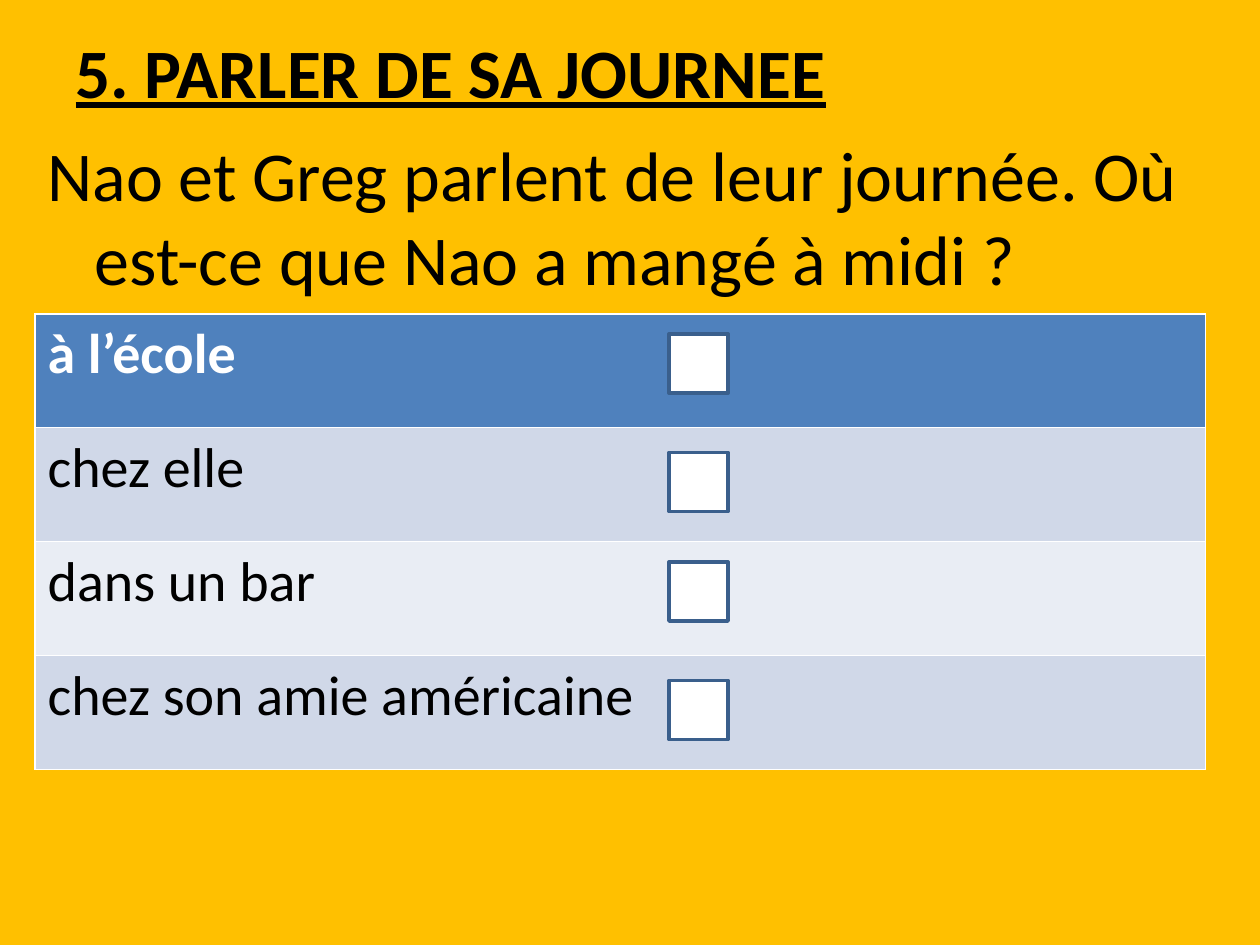
from dataclasses import dataclass

from lxml.etree import SubElement
from pptx import Presentation
from pptx.dml.color import RGBColor as Rgb
from pptx.enum.shapes import MSO_SHAPE as Shape
from pptx.enum.text import MSO_ANCHOR as Anchor, MSO_AUTO_SIZE as AutoSize, PP_ALIGN as Align
from pptx.oxml.ns import qn
from pptx.util import Pt


@dataclass(frozen=True)
class Theme:
    font: str = "Calibri"
    background: Rgb = Rgb(0xFF, 0xC0, 0x00)
    ink: Rgb = Rgb(0x00, 0x00, 0x00)
    white: Rgb = Rgb(0xFF, 0xFF, 0xFF)
    header: Rgb = Rgb(0x4F, 0x81, 0xBD)
    dark_band: Rgb = Rgb(0xD0, 0xD8, 0xE8)
    light_band: Rgb = Rgb(0xE9, 0xED, 0xF4)
    box_line: Rgb = Rgb(0x3A, 0x5F, 0x8C)
    title_size: float = 39.6
    question_size: float = 40
    answer_size: float = 32


@dataclass(frozen=True)
class Answer:
    text: str
    box_top: float


THEME = Theme()
ANSWERS = [
    Answer("à l’école", 190.8),
    Answer("chez elle", 258.5),
    Answer("dans un bar", 321.1),
    Answer("chez son amie américaine", 388.8),
]
ROW_HEIGHT = 65.16
BOX_LEFT, BOX_SIDE = 382.3, 33.8


def place(shape, left: float, top: float, width: float, height: float) -> None:
    shape.left, shape.top = Pt(left), Pt(top)
    shape.width, shape.height = Pt(width), Pt(height)


def add_run(paragraph, text: str, size: float, color: Rgb = THEME.ink,
            bold: bool = False, underline: bool = False) -> None:
    run = paragraph.add_run()
    run.text = text
    font = run.font
    font.name, font.size, font.bold = THEME.font, Pt(size), bold
    font.underline = underline
    font.color.rgb = color


def add_answers(slide) -> None:
    table = slide.shapes.add_table(
        len(ANSWERS), 1, Pt(20), Pt(179.3), Pt(669), Pt(ROW_HEIGHT * len(ANSWERS))).table
    for index, answer in enumerate(ANSWERS):
        is_header = index == 0
        band = THEME.dark_band if index % 2 else THEME.light_band
        table.rows[index].height = Pt(ROW_HEIGHT)
        cell = table.cell(index, 0)
        cell.fill.solid()
        cell.fill.fore_color.rgb = THEME.header if is_header else band
        add_run(cell.text_frame.paragraphs[0], answer.text, THEME.answer_size,
                THEME.white if is_header else THEME.ink, bold=is_header)


def add_tick_box(slide, top: float) -> None:
    box = slide.shapes.add_shape(
        Shape.RECTANGLE, Pt(BOX_LEFT), Pt(top), Pt(BOX_SIDE), Pt(BOX_SIDE))
    box.shadow.inherit = False
    box.fill.solid()
    box.fill.fore_color.rgb = THEME.white
    box.line.color.rgb = THEME.box_line
    box.line.width = Pt(2)


def main() -> None:
    deck = Presentation()
    deck.slide_width, deck.slide_height = Pt(720), Pt(540)
    slide = deck.slides.add_slide(deck.slide_layouts[1])
    slide.background.fill.solid()
    slide.background.fill.fore_color.rgb = THEME.background

    # Heading
    title = slide.shapes.title
    place(title, 36, 21.6, 648, 90)
    title.text_frame.auto_size = AutoSize.NONE
    title.text_frame.vertical_anchor = Anchor.MIDDLE
    heading = title.text_frame.paragraphs[0]
    heading.alignment = Align.LEFT
    add_run(heading, "5. PARLER DE SA JOURNEE", THEME.title_size, bold=True, underline=True)
    heading.add_line_break()

    # Question, with a hanging indent and no bullet
    body = slide.placeholders[1]
    place(body, 20, 71.3, 686, 453.6)
    body.text_frame.auto_size = AutoSize.NONE
    question = body.text_frame.paragraphs[0]
    SubElement(question._p.get_or_add_pPr(), qn("a:buNone"))
    add_run(question, "Nao et Greg parlent de leur journée. Où est-ce que Nao a mangé à midi ?",
            THEME.question_size)

    # Answers and their tick boxes
    add_answers(slide)
    for answer in ANSWERS:
        add_tick_box(slide, answer.box_top)

    deck.save("out.pptx")


if __name__ == "__main__":
    main()
